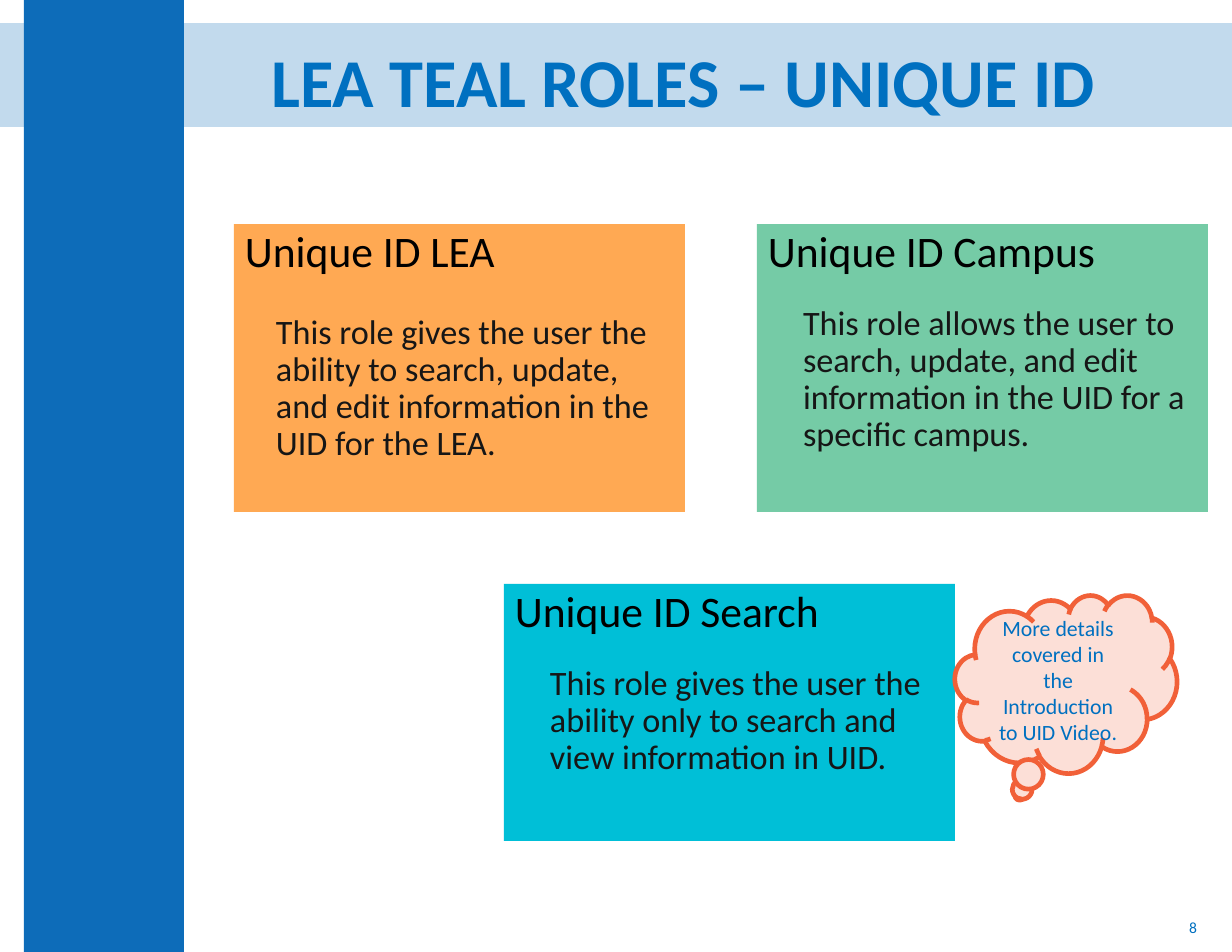
import pptx
import pptx.util
import pptx.dml.color
import pptx.enum.shapes
import pptx.enum.text
import pptx.oxml.ns
import lxml.etree

PX = 914400 / 112
COLORS = {
    "blue": "0D6CB9", "text": "0070C0", "black": "000000", "ink": "161616",
    "orange": "FFA953", "green": "75CBA6", "cyan": "00BFD7",
    "blush": "FCDFD7", "coral": "F16038",
}
ALIGN = pptx.enum.text.PP_ALIGN
ANCHOR = pptx.enum.text.MSO_ANCHOR
SHAPE = pptx.enum.shapes.MSO_SHAPE


def px(n):
    return pptx.util.Emu(round(n * PX))


def rgb(name):
    return pptx.dml.color.RGBColor.from_string(COLORS[name])


class Deck:
    """Holds the style and the current slide, and draws each kind of element."""

    font = "Calibri"

    def __init__(self, wide, high):
        self.show = pptx.Presentation()
        self.show.slide_width, self.show.slide_height = px(wide), px(high)
        self.slide = self.show.slides.add_slide(self.show.slide_layouts[6])

    def shape(self, box, fill, kind=SHAPE.RECTANGLE, line=None, alpha=None):
        item = self.slide.shapes.add_shape(kind, *map(px, box))
        item.shadow.inherit = False
        item.fill.solid()
        item.fill.fore_color.rgb = rgb(fill)
        if alpha:
            color = item._element.spPr.find(".//" + pptx.oxml.ns.qn("a:srgbClr"))
            node = lxml.etree.SubElement(color, pptx.oxml.ns.qn("a:alpha"))
            node.set("val", str(alpha * 1000))
        if line:
            item.line.color.rgb = rgb(line)
            item.line.width = pptx.util.Pt(3)
        else:
            item.line.fill.background()
        return item

    def words(self, item, paras, anchor=ANCHOR.MIDDLE):
        frame = item.text_frame
        frame.word_wrap = True
        frame.vertical_anchor = anchor
        for i, (text, size, color, form, bold) in enumerate(paras):
            para = frame.add_paragraph() if i else frame.paragraphs[0]
            indent = form.pop("indent", 0)
            if indent:
                para._p.get_or_add_pPr().set("marL", str(px(indent)))
            for key, value in form.items():
                setattr(para, key, value)
            run = para.add_run()
            run.text = text
            style = {"name": self.font, "size": pptx.util.Pt(size), "bold": bold}
            for key, value in style.items():
                setattr(run.font, key, value)
            run.font.color.rgb = rgb(color)

    def label(self, box, text, size, color, form, bold=False):
        item = self.slide.shapes.add_textbox(*map(px, box))
        self.words(item, [(text, size, color, form, bold)])

    def card(self, box, fill, head, body, indent, gap):
        base = {"alignment": ALIGN.LEFT, "line_spacing": 0.9}
        more = {"indent": indent, "space_before": pptx.util.Pt(gap)}
        self.words(self.shape(box, fill), [
            (head, 28, "black", base, False),
            (body, 22, "ink", {**base, **more}, False),
        ], ANCHOR.TOP)

    def cloud(self, box, text):
        item = self.shape(box, "blush", SHAPE.CLOUD_CALLOUT, "coral")
        self.words(item, [(text, 14, "text", {"alignment": ALIGN.CENTER}, False)])


def main():
    deck = Deck(1232, 952)
    deck.shape((0, 23, 1232, 104), "blue", alpha=25)
    deck.shape((24, 0, 160, 952), "blue")
    deck.label((192, 47, 983, 77), "LEA TEAL ROLES – UNIQUE ID", 44, "text",
               {"alignment": ALIGN.CENTER, "line_spacing": 0.9}, True)
    deck.label((931, 902, 277, 50), "8", 10, "text", {"alignment": ALIGN.RIGHT})
    cards = [
        ((234, 224, 451, 288), "orange", "Unique ID LEA",
         "This role gives the user the ability to search, update, and edit "
         "information in the UID for the LEA.", 31, 24.5),
        ((504, 584, 451, 257), "cyan", "Unique ID Search",
         "This role gives the user the ability only to search and view "
         "information in UID.", 35, 19),
        ((757, 224, 451, 288), "green", "Unique ID Campus",
         "This role allows the user to search, update, and edit "
         "information in the UID for a specific campus.", 35, 19),
    ]
    for card in cards:
        deck.card(*card)
    deck.cloud((955, 595, 222, 178),
               "More details covered in the Introduction to UID Video.")
    deck.show.save("out.pptx")


if __name__ == "__main__":
    main()
